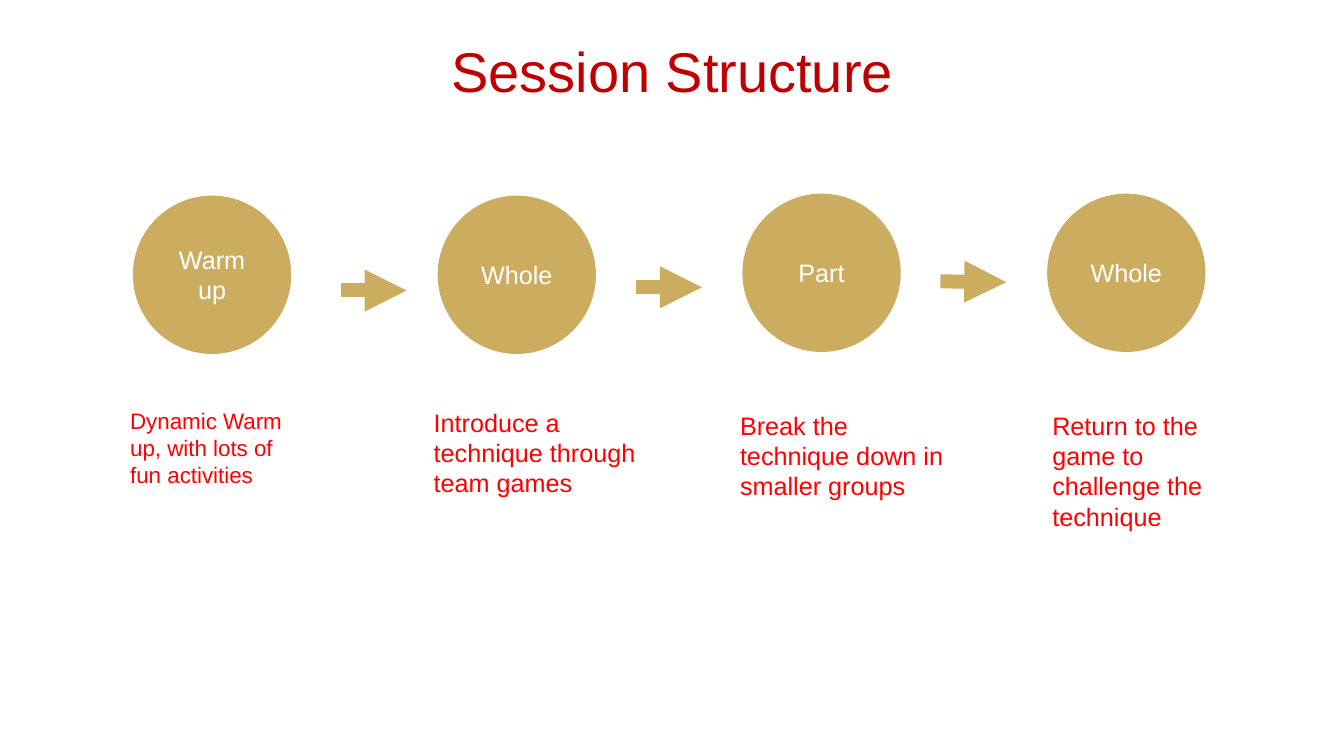
from lxml import etree
from pptx import Presentation
from pptx.dml.color import RGBColor
from pptx.enum.shapes import MSO_CONNECTOR, MSO_SHAPE
from pptx.enum.text import MSO_ANCHOR, MSO_AUTO_SIZE, PP_ALIGN
from pptx.oxml.ns import qn
from pptx.util import Cm, Pt

STRAIGHT = MSO_CONNECTOR.STRAIGHT
OVAL = MSO_SHAPE.OVAL
TOP, MIDDLE = MSO_ANCHOR.TOP, MSO_ANCHOR.MIDDLE
NO_FIT = MSO_AUTO_SIZE.NONE
LEFT, CENTER = PP_ALIGN.LEFT, PP_ALIGN.CENTER

GOLD = RGBColor(0xCC, 0xAD, 0x60)
DARK_RED = RGBColor(0xC0, 0x00, 0x00)
RED = RGBColor(0xFF, 0x00, 0x00)
WHITE = RGBColor(0xFF, 0xFF, 0xFF)

FONT = "Arial"
INSET = Cm(0.13)
CIRCLE_LEFT, CIRCLE_PITCH, CIRCLE_SIZE = 3.35, 7.68, 3.99
ARROW_LENGTH = 1.66

# Stage: circle top, circle label, caption, caption box (cm), caption size
STAGES = [
    (4.93, "Warm\nup", "Dynamic Warm up, with lots of fun activities",
     (3.15, 10.13, 4.6, 2.13), 16),
    (4.93, "Whole", "Introduce a technique through team games",
     (10.8, 10.13, 5.49, 2.46), 18),
    (4.88, "Part", "Break the technique down in smaller groups",
     (18.52, 10.21, 5.64, 2.46), 18),
    (4.88, "Whole", "Return to the game to challenge the technique",
     (26.39, 10.21, 5.16, 3.2), 18),
]
# Arrow: left, start height, end height (cm)
ARROWS = [(8.59, 7.32, 7.32), (16.03, 7.24, 7.24), (23.7, 7.09, 7.11)]


def write_text(frame, text, size, color, align=LEFT, anchor=TOP, spacing=1.0):
    frame_format = {
        "word_wrap": True, "auto_size": NO_FIT, "vertical_anchor": anchor,
        "margin_left": INSET, "margin_right": INSET,
        "margin_top": INSET, "margin_bottom": INSET,
    }
    for name, value in frame_format.items():
        setattr(frame, name, value)
    frame.text = text
    for para in frame.paragraphs:
        para.alignment = align
        para.line_spacing = spacing
        for span in para.runs:
            for name, value in {"name": FONT, "size": Pt(size)}.items():
                setattr(span.font, name, value)
            span.font.color.rgb = color


def set_title(page, text):
    title = page.shapes.title
    place = {"left": Cm(2.33), "top": Cm(0.97),
             "width": Cm(29.21), "height": Cm(1.83)}
    for name, value in place.items():
        setattr(title, name, value)
    write_text(title.text_frame, text, 40, DARK_RED, CENTER, spacing=0.9)


def add_circle(page, left, top, label):
    circle = page.shapes.add_shape(OVAL, Cm(left), Cm(top),
                                   Cm(CIRCLE_SIZE), Cm(CIRCLE_SIZE))
    circle.shadow.inherit = False
    circle.fill.solid()
    circle.fill.fore_color.rgb = GOLD
    circle.line.fill.background()
    write_text(circle.text_frame, label, 18, WHITE, CENTER, MIDDLE)


def add_caption(page, place, text, size):
    box = page.shapes.add_textbox(*[Cm(length) for length in place])
    write_text(box.text_frame, text, size, RED)


def add_arrow(page, left, start, end):
    arrow = page.shapes.add_connector(STRAIGHT, Cm(left), Cm(start),
                                      Cm(left + ARROW_LENGTH), Cm(end))
    arrow.line.color.rgb = GOLD
    arrow.line.width = Pt(10)
    # Arrowhead at the end, and no shadow
    outline = arrow.line._get_or_add_ln()
    etree.SubElement(outline, qn("a:tailEnd"), type="triangle")
    etree.SubElement(arrow._element.spPr, qn("a:effectLst"))


def main():
    deck = Presentation()
    deck.slide_width, deck.slide_height = Cm(33.87), Cm(19.05)
    page = deck.slides.add_slide(deck.slide_layouts[5])

    set_title(page, "Session Structure")

    # Stages of the session with their captions
    for index, (top, label, caption, place, size) in enumerate(STAGES):
        add_circle(page, CIRCLE_LEFT + index * CIRCLE_PITCH, top, label)
        add_caption(page, place, caption, size)

    # Arrows between the stages
    for left, start, end in ARROWS:
        add_arrow(page, left, start, end)

    deck.save("out.pptx")


if __name__ == "__main__":
    main()
